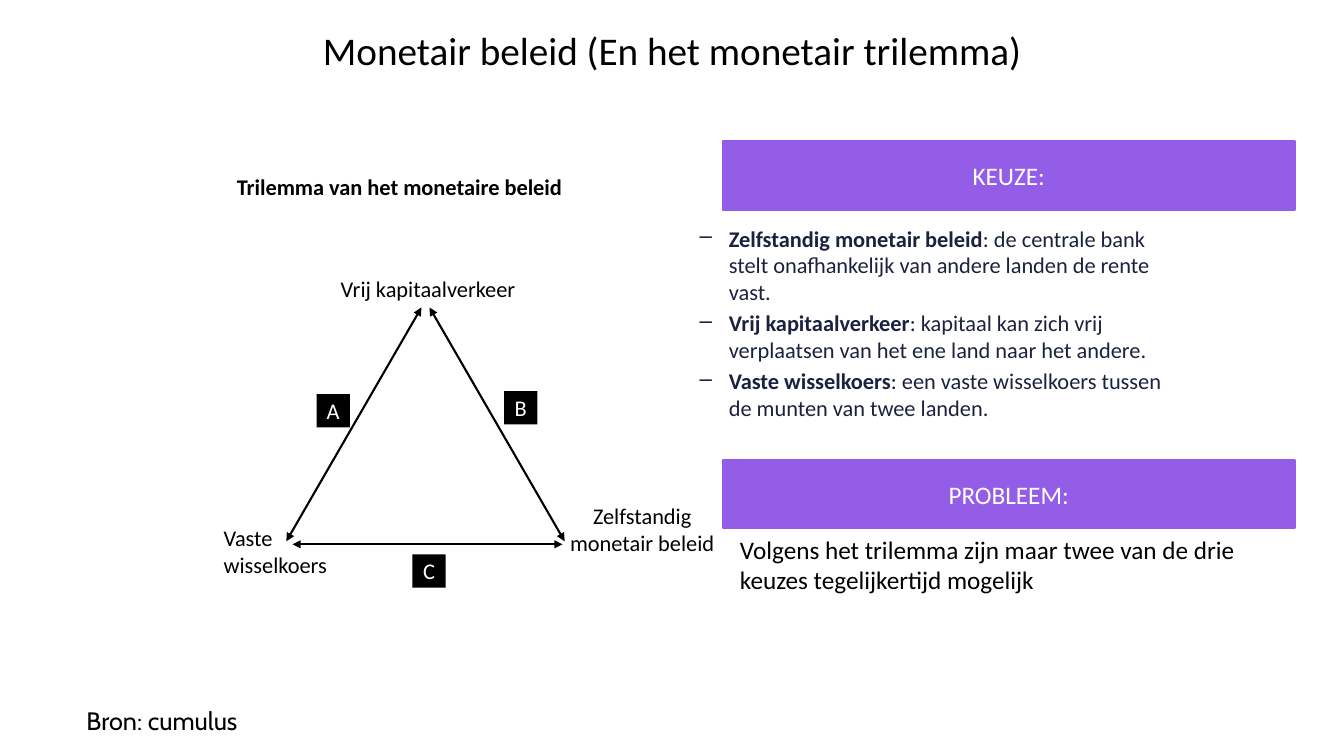
import lxml.etree
import pptx
import pptx.dml.color
import pptx.enum.shapes
import pptx.enum.text
import pptx.oxml.ns
import pptx.util
from pptx.util import Inches

BLACK, WHITE, PURPLE, NAVY = "000000", "FFFFFF", "945DE8", "1B223F"
LEFT = pptx.enum.text.PP_ALIGN.LEFT
CENTER = pptx.enum.text.PP_ALIGN.CENTER


def rgb(value):
    return pptx.dml.color.RGBColor.from_string(value)


def add_element(parent, tag, **attributes):
    lxml.etree.SubElement(parent, pptx.oxml.ns.qn(tag), attributes)


class TrilemmaSlide:
    font_name = "Calibri"
    label_size = 16
    body_size = 18
    line_width = pptx.util.Pt(1.5)

    def __init__(self, presentation):
        self.slide = presentation.slides.add_slide(presentation.slide_layouts[5])

    def style(self, paragraph, size, color=BLACK, bold=None, align=LEFT, font=None):
        paragraph.alignment = align
        paragraph.font.name = font or self.font_name
        paragraph.font.size = pptx.util.Pt(size)
        paragraph.font.color.rgb = rgb(color)
        paragraph.font.bold = bold

    def title(self, text, left, top, width, height):
        title = self.slide.shapes.title
        title.left, title.top = Inches(left), Inches(top)
        title.width, title.height = Inches(width), Inches(height)
        title.text_frame.text = text
        title.text_frame.auto_size = pptx.enum.text.MSO_AUTO_SIZE.NONE
        self.style(title.text_frame.paragraphs[0], 28, align=CENTER)

    def frame(self, left, top, width, height):
        box = self.slide.shapes.add_textbox(
            Inches(left), Inches(top), Inches(width), Inches(height))
        box.text_frame.word_wrap = True
        return box.text_frame

    def text(self, text, left, top, width, height, size=label_size, **style):
        frame = self.frame(left, top, width, height)
        frame.text = text
        self.style(frame.paragraphs[0], size, **style)

    def definitions(self, items, left, top, width, height):
        frame = self.frame(left, top, width, height)
        for index, (term, meaning) in enumerate(items):
            paragraph = frame.add_paragraph() if index else frame.paragraphs[0]
            properties = paragraph._p.get_or_add_pPr()
            properties.set("marL", str(Inches(0.69)))
            properties.set("indent", str(Inches(-0.29)))
            add_element(properties, "a:buChar", char="–")
            if index:
                paragraph.space_before = pptx.util.Pt(3)
            self.style(paragraph, self.label_size, NAVY)
            term_run = paragraph.add_run()
            term_run.text = term
            term_run.font.bold = True
            paragraph.add_run().text = ": " + meaning

    def block(self, text, left, top, width, height, fill, size, wrap=True):
        block = self.slide.shapes.add_shape(
            pptx.enum.shapes.MSO_SHAPE.RECTANGLE,
            Inches(left), Inches(top), Inches(width), Inches(height))
        block.shadow.inherit = False
        block.fill.solid()
        block.fill.fore_color.rgb = rgb(fill)
        frame = block.text_frame
        frame.text = text
        frame.word_wrap = wrap
        frame.vertical_anchor = pptx.enum.text.MSO_ANCHOR.MIDDLE
        self.style(frame.paragraphs[0], size, WHITE, align=CENTER)
        return block

    def heading(self, text, top):
        bar = self.block(text, 7.17, top, 5.67, 0.68, PURPLE, self.body_size)
        bar.line.color.rgb = rgb(PURPLE)
        bar.line.width = self.line_width

    def marker(self, letter, left, top):
        square = self.block(letter, left, top, 0.33, 0.33, BLACK,
                            self.label_size, wrap=False)
        square.line.fill.background()

    def double_arrow(self, x1, y1, x2, y2):
        arrow = self.slide.shapes.add_connector(
            pptx.enum.shapes.MSO_CONNECTOR.STRAIGHT,
            Inches(x1), Inches(y1), Inches(x2), Inches(y2))
        arrow.line.color.rgb = rgb(BLACK)
        arrow.line.width = self.line_width
        outline = arrow.line._get_or_add_ln()
        for end in ("a:headEnd", "a:tailEnd"):
            add_element(outline, end, type="triangle")
        add_element(arrow._element.spPr, "a:effectLst")


def main():
    presentation = pptx.Presentation()
    presentation.slide_width = Inches(13.33)
    presentation.slide_height = Inches(7.5)
    page = TrilemmaSlide(presentation)
    page.title("Monetair beleid (En het monetair trilemma)", 2.34, 0.21, 8.65, 0.57)

    # Definitions of the three choices
    page.definitions([
        ("Zelfstandig monetair beleid",
         "de centrale bank stelt onafhankelijk van andere landen de rente vast."),
        ("Vrij kapitaalverkeer",
         "kapitaal kan zich vrij verplaatsen van het ene land naar het andere."),
        ("Vaste wisselkoers",
         "een vaste wisselkoers tussen de munten van twee landen."),
    ], 6.44, 2.18, 5.28, 2.38)

    # Triangle sides and their letters
    for side in [(2.9, 5.4, 5.58, 5.4), (4.26, 3.05, 5.6, 5.37),
                 (4.18, 3.05, 2.84, 5.37)]:
        page.double_arrow(*side)
    for letter, left, top in [("A", 3.14, 3.91), ("C", 4.09, 5.5), ("B", 5, 3.88)]:
        page.marker(letter, left, top)

    # Triangle corners and caption
    page.text("Vaste wisselkoers", 2.12, 5.15, 1.5, 0.64)
    page.text("Vrij kapitaalverkeer", 3.04, 2.68, 2.41, 0.37, align=CENTER)
    page.text("Zelfstandig monetair beleid", 5.54, 4.93, 1.66, 0.91, align=CENTER)
    page.text("Trilemma van het monetaire beleid", 2.25, 1.67, 3.88, 0.37, bold=True)

    # Choice and problem
    page.heading("KEUZE:", 1.4)
    page.heading("PROBLEEM:", 4.56)
    page.text("Volgens het trilemma zijn maar twee van de drie keuzes "
              "tegelijkertijd mogelijk", 7.24, 5.25, 5.67, 0.71, page.body_size)

    # Source
    page.text("Bron: cumulus", 0.76, 6.95, 3, 0.4, page.body_size, font="Cabin")
    presentation.save("out.pptx")


if __name__ == "__main__":
    main()
